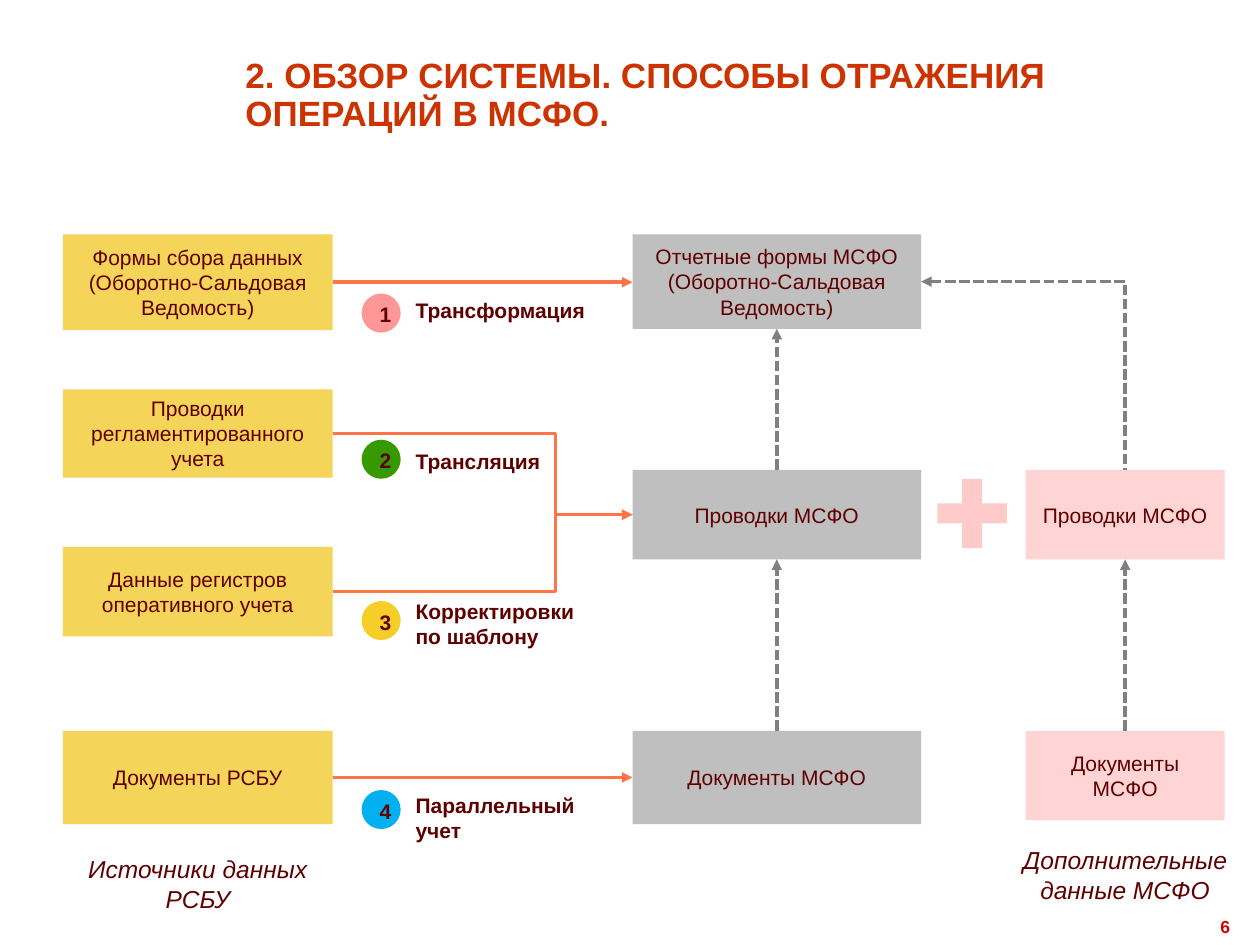
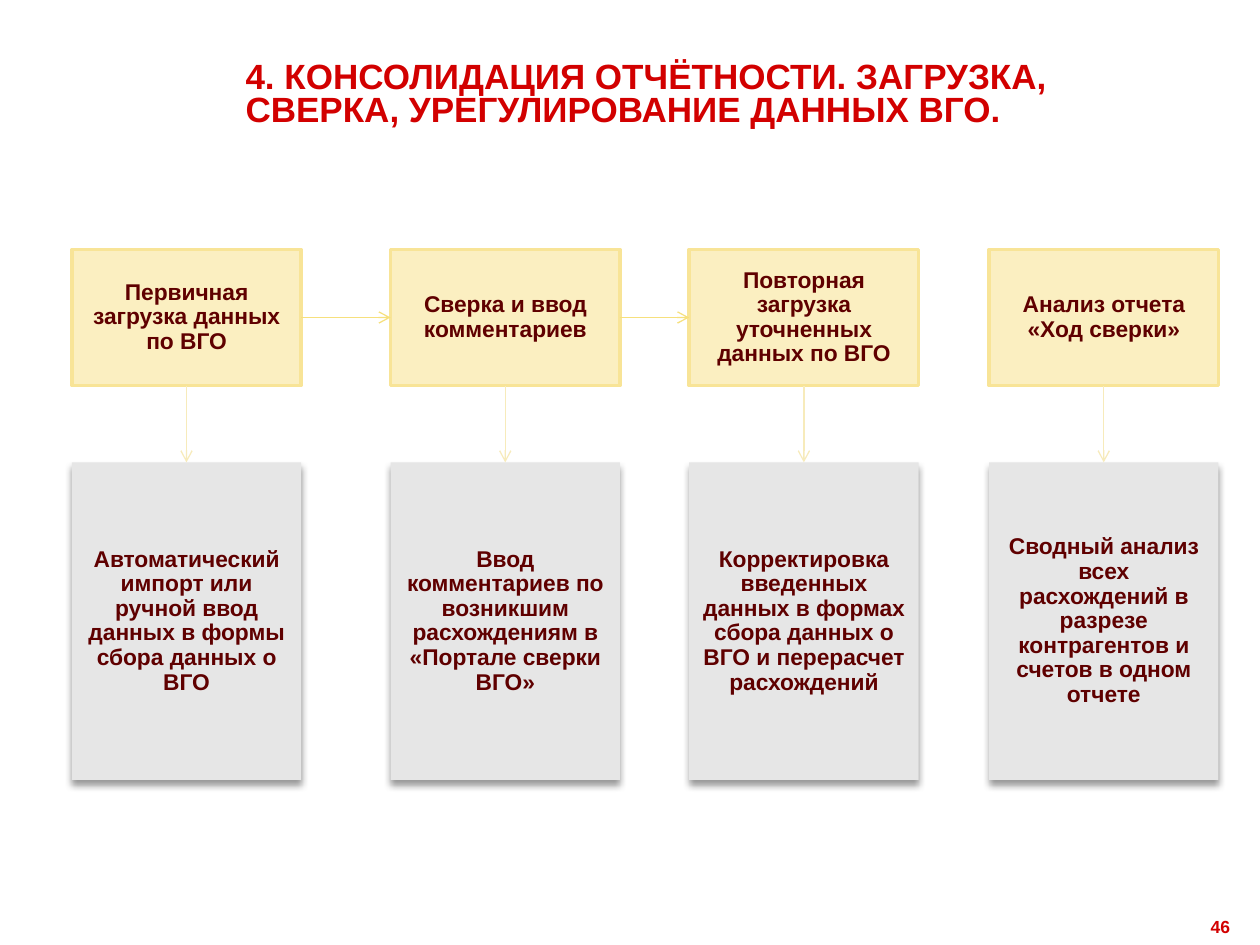
"""Builds two slides on IFRS accounting: ways of posting and consolidation."""
from dataclasses import dataclass

from lxml import etree
from pptx import Presentation
from pptx.dml import color
from pptx.enum import dml, shapes, text
from pptx.oxml import ns
from pptx.util import Inches, Pt

SHAPE = shapes.MSO_SHAPE
ALIGN = text.PP_ALIGN
ANCHOR = text.MSO_ANCHOR


@dataclass(frozen=True)
class Theme:
    """Colours, font and type sizes of the deck."""
    font: str = "Arial"
    ink: str = "5F0000"
    red: str = "D20000"
    rust: str = "CC3300"
    source: str = "F4D459"
    ifrs: str = "BFBFBF"
    extra: str = "FFD4D4"
    pink: str = "FF9797"
    green: str = "369900"
    yellow: str = "F5CF28"
    blue: str = "00B0F0"
    flow: str = "FF7547"
    feed: str = "808080"
    step: str = "FBEFC1"
    step_edge: str = "F8E497"
    step_arrow: str = "F6E07D"
    detail: str = "E6E6E6"
    detail_arrow: str = "F7EBBB"
    title_size: int = 20
    caption_size: int = 14
    step_size: int = 13
    body_size: int = 12
    number_size: int = 10


THEME = Theme()


@dataclass(frozen=True)
class Box:
    """A rectangle in inches."""
    left: float
    top: float
    width: float
    height: float

    def inside(self, left, top, width, height):
        """Return a box placed relative to this one."""
        return Box(self.left + left, self.top + top, width, height)

    def lengths(self):
        """Return left, top, width and height as lengths."""
        return [Inches(n) for n in (self.left, self.top, self.width, self.height)]


def rgb(value):
    """Return a colour object for a hex value."""
    return color.RGBColor.from_string(value)


def add_element(parent, tag, **attributes):
    """Append a drawing element to its parent."""
    return etree.SubElement(parent, ns.qn(tag), attributes)


def write(shape, words, size=THEME.body_size, ink=THEME.ink, bold=None, italic=None,
          align=ALIGN.LEFT, anchor=ANCHOR.TOP, spacing=None):
    """Fill a shape with uniformly styled paragraphs."""
    frame = shape.text_frame
    frame.word_wrap = True
    frame.vertical_anchor = anchor
    frame.text = words
    for paragraph in frame.paragraphs:
        paragraph.alignment = align
        if spacing:
            paragraph.line_spacing = spacing
        font = paragraph.font
        font.name, font.size = THEME.font, Pt(size)
        font.bold, font.italic = bold, italic
        font.color.rgb = rgb(ink)


def add_label(slide, box, words, **style):
    """Add a text box."""
    write(slide.shapes.add_textbox(*box.lengths()), words, **style)


def add_block(slide, box, kind, fill, edge=None):
    """Add a flat filled shape with an optional outline."""
    shape = slide.shapes.add_shape(kind, *box.lengths())
    shape.shadow.inherit = False
    shape.fill.solid()
    shape.fill.fore_color.rgb = rgb(fill)
    if edge:
        shape.line.color.rgb = rgb(edge)
        shape.line.width = Pt(2)
    else:
        shape.line.fill.background()
    return shape


def add_node(slide, box, words, fill):
    """Add a diagram node with centred text."""
    node = add_block(slide, box, SHAPE.SNIP_2_DIAG_RECTANGLE, fill)
    node.adjustments[0] = node.adjustments[1] = 0
    write(node, words, align=ALIGN.CENTER, anchor=ANCHOR.MIDDLE)
    return node


def side(shape, name):
    """Return the middle point of one side of a shape."""
    middle_x = shape.left + shape.width // 2
    middle_y = shape.top + shape.height // 2
    return {"left": (shape.left, middle_y),
            "right": (shape.left + shape.width, middle_y),
            "top": (middle_x, shape.top),
            "bottom": (middle_x, shape.top + shape.height)}[name]


def add_link(slide, begin, end, ink, width=2, dashed=False, preset="line",
             bend=None, tip="a:tailEnd", tip_type="triangle"):
    """Add a connector with an arrowhead."""
    link = slide.shapes.add_connector(shapes.MSO_CONNECTOR.STRAIGHT, *begin, *end)
    link.line.color.rgb = rgb(ink)
    link.line.width = Pt(width)
    if dashed:
        link.line.dash_style = dml.MSO_LINE.SQUARE_DOT
    properties = link._element.spPr
    add_element(properties.find(ns.qn("a:ln")), tip, type=tip_type)
    add_element(properties, "a:effectLst")
    geometry = properties.find(ns.qn("a:prstGeom"))
    geometry.set("prst", preset)
    if bend:
        add_element(geometry.find(ns.qn("a:avLst")), "a:gd",
                    name="adj1", fmla=f"val {round(bend * 100000)}")


def add_drop_shadow(shape):
    """Give a shape a soft shadow below it."""
    effects = shape._element.spPr.find(ns.qn("a:effectLst"))
    shadow = add_element(effects, "a:outerShdw", blurRad=str(Pt(4)), dist=str(Pt(3)),
                         dir="5400000", algn="t", rotWithShape="0")
    shade = add_element(shadow, "a:srgbClr", val="000000")
    add_element(shade, "a:alpha", val="40000")


def start_slide(presentation, title, number, ink, width, spacing):
    """Add a blank slide with its title and number."""
    slide = presentation.slides.add_slide(presentation.slide_layouts[6])
    add_label(slide, Box(1.85, 0.17, width, 1.18), title, size=THEME.title_size,
              ink=ink, bold=True, anchor=ANCHOR.MIDDLE, spacing=spacing)
    add_label(slide, Box(9.02, 7.22, 0.84, 0.28), number, size=THEME.number_size,
              ink=THEME.red, bold=True, align=ALIGN.RIGHT)
    return slide


def draw_sources(slide, area):
    """Draw the column of source data and return its nodes."""
    rows = [(0, 0.76, "Формы сбора данных\n(Оборотно-Сальдовая Ведомость)"),
            (1.23, 0.7, "Проводки регламентированного учета"),
            (2.48, 0.71, "Данные регистров оперативного учета"),
            (3.94, 0.74, "Документы РСБУ")]
    return [add_node(slide, area.inside(0, top, 2.14, height), words, THEME.source)
            for top, height, words in rows]


def draw_ifrs(slide, area):
    """Draw the column of IFRS objects and return its nodes."""
    rows = [(0, 0.75, "Отчетные формы МСФО\n(Оборотно-Сальдовая Ведомость)"),
            (1.87, 0.71, "Проводки МСФО"),
            (3.94, 0.74, "Документы МСФО")]
    return [add_node(slide, area.inside(0, top, 2.29, height), words, THEME.ifrs)
            for top, height, words in rows]


def draw_extras(slide, area):
    """Draw the column of additional IFRS data and return its nodes."""
    rows = [(1.87, "Проводки МСФО"), (3.94, "Документы МСФО")]
    return [add_node(slide, area.inside(0, top, 1.58, 0.71), words, THEME.extra)
            for top, words in rows]


def draw_methods(slide, area):
    """Draw the numbered names of the four methods."""
    methods = [(0.47, 0.45, "Трансформация", THEME.pink),
               (1.63, 1.65, "Трансляция", THEME.green),
               (2.91, 2.84, "Корректировки\nпо шаблону", THEME.yellow),
               (4.41, 4.38, "Параллельный учет", THEME.blue)]
    for number, (badge_top, label_top, name, fill) in enumerate(methods, 1):
        badge = add_block(slide, area.inside(0, badge_top, 0.31, 0.31), SHAPE.OVAL, fill)
        write(badge, str(number), bold=True, anchor=ANCHOR.MIDDLE, spacing=1.1)
        add_label(slide, area.inside(0.33, label_top, 1.61, 0.3), name, bold=True)


def draw_plus(slide, box):
    """Draw the half-transparent plus sign."""
    plus = add_block(slide, box, SHAPE.CROSS, THEME.pink)
    plus.adjustments[0] = 0.356
    shade = plus._element.spPr.find(".//" + ns.qn("a:srgbClr"))
    add_element(shade, "a:alpha", val="50000")


def link_methods(slide, sources, ifrs, extras):
    """Connect the columns of the methods diagram."""
    reports, entries, documents = ifrs
    extra_entries, extra_documents = extras
    forms, ledger, registers, papers = sources
    for source, target in ((forms, reports), (papers, documents)):
        begin, end = side(source, "right"), side(target, "left")
        add_link(slide, begin, (end[0], begin[1]), THEME.flow)
    for source in (ledger, registers):
        add_link(slide, side(source, "right"), side(entries, "left"), THEME.flow,
                 preset="bentConnector3", bend=0.744)
    for lower, upper in ((entries, reports), (documents, entries),
                         (extra_documents, extra_entries)):
        add_link(slide, side(lower, "top"), side(upper, "bottom"), THEME.feed, dashed=True)
    add_link(slide, side(reports, "right"), side(extra_entries, "top"), THEME.feed,
             dashed=True, preset="bentConnector2", tip="a:headEnd")


def build_methods(presentation, area):
    """Build the slide on ways of reflecting operations."""
    slide = start_slide(presentation,
                        "2. ОБЗОР СИСТЕМЫ. СПОСОБЫ ОТРАЖЕНИЯ ОПЕРАЦИЙ В МСФО.",
                        "6", THEME.rust, 7.53, 0.9)
    sources = draw_sources(slide, area)
    ifrs = draw_ifrs(slide, area.inside(4.52, 0, 2.29, area.height))
    extras = draw_extras(slide, area.inside(7.64, 0, 1.58, area.height))
    draw_methods(slide, area.inside(2.37, 0, 1.94, area.height))
    draw_plus(slide, area.inside(6.94, 1.94, 0.55, 0.55))
    link_methods(slide, sources, ifrs, extras)
    for left, top, words in ((-0.18, 4.87, "Источники данных\nРСБУ"),
                             (7.18, 4.8, "Дополнительные данные МСФО")):
        add_label(slide, area.inside(left, top, 2.5, 0.57), words,
                  size=THEME.caption_size, italic=True, align=ALIGN.CENTER)


def draw_stage(slide, area, step, detail):
    """Draw one step above its detail and return the step."""
    head = add_block(slide, area.inside(0, 0, area.width, 1.08), SHAPE.RECTANGLE,
                     THEME.step, THEME.step_edge)
    body = add_block(slide, area.inside(0, 1.69, area.width, area.height - 1.69),
                     SHAPE.RECTANGLE, THEME.detail)
    add_drop_shadow(body)
    for shape, words in ((head, step), (body, detail)):
        write(shape, words, size=THEME.step_size, bold=True, align=ALIGN.CENTER,
              anchor=ANCHOR.MIDDLE, spacing=0.9)
    add_link(slide, side(head, "bottom"), side(body, "top"), THEME.detail_arrow,
             width=0.75, tip_type="arrow")
    return head


def build_consolidation(presentation, area):
    """Build the slide on loading and reconciling intragroup data."""
    slide = start_slide(
        presentation,
        "4. КОНСОЛИДАЦИЯ ОТЧЁТНОСТИ. ЗАГРУЗКА, СВЕРКА, УРЕГУЛИРОВАНИЕ ДАННЫХ ВГО.",
        "46", THEME.red, 7.01, 0.8)
    stages = [
        (0, "Первичная загрузка данных по ВГО",
         "Автоматический импорт или ручной ввод данных в формы сбора данных о ВГО"),
        (2.53, "Сверка и ввод комментариев",
         "Ввод комментариев по возникшим расхождениям в «Портале сверки ВГО»"),
        (4.9, "Повторная загрузка уточненных данных по ВГО",
         "Корректировка введенных данных в формах сбора данных о ВГО и перерасчет расхождений"),
        (7.28, "Анализ отчета «Ход сверки»",
         "Сводный анализ всех расхождений в разрезе контрагентов и счетов в одном отчете")]
    steps = [draw_stage(slide, area.inside(left, 0, 1.82, area.height), step, detail)
             for left, step, detail in stages]
    for before, after in zip(steps[:2], steps[1:3]):
        add_link(slide, side(before, "right"), side(after, "left"), THEME.step_arrow,
                 width=0.75, tip_type="arrow")


def main():
    """Create and save the presentation."""
    presentation = Presentation()
    presentation.slide_width, presentation.slide_height = Inches(10), Inches(7.5)
    build_methods(presentation, Box(0.5, 1.86, 9.22, 5.44))
    build_consolidation(presentation, Box(0.57, 1.98, 9.1, 4.21))
    presentation.save("out.pptx")


if __name__ == "__main__":
    main()
